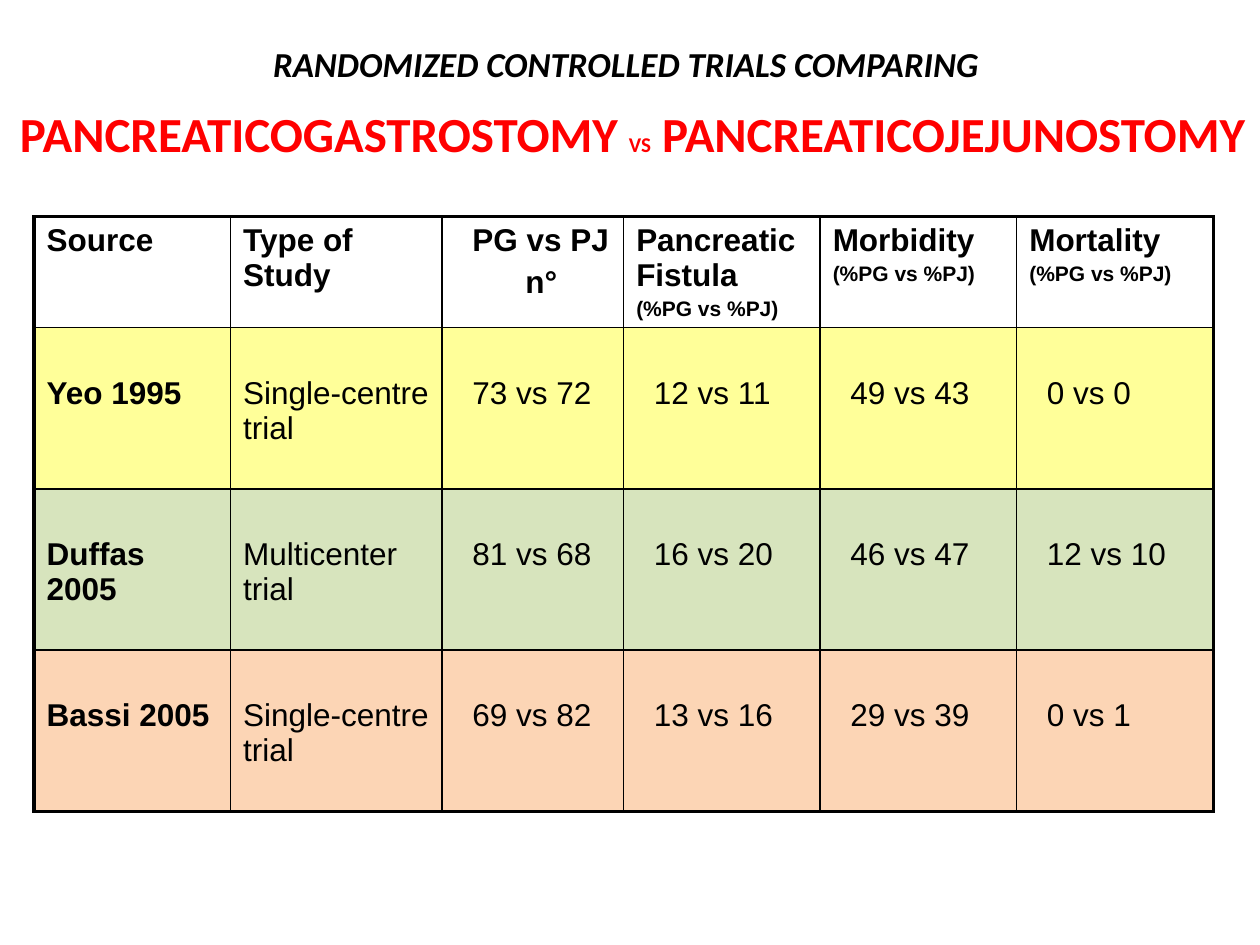
from lxml import etree
from pptx import Presentation
from pptx.dml.color import RGBColor
from pptx.enum.text import MSO_ANCHOR, MSO_AUTO_SIZE, PP_ALIGN
from pptx.oxml.ns import qn
from pptx.util import Inches, Pt

MIDDLE, FIXED = MSO_ANCHOR.MIDDLE, MSO_AUTO_SIZE.NONE
LEFT, CENTER, JUSTIFY = PP_ALIGN.LEFT, PP_ALIGN.CENTER, PP_ALIGN.JUSTIFY

HUES = {"ink": "000000", "red": "FF0000", "yellow": "FFFF99",
        "green": "D7E4BD", "peach": "FCD5B5"}

TITLE = "RANDOMIZED CONTROLLED TRIALS COMPARING "
METHODS = [("PANCREATICOGASTROSTOMY ", 28), ("VS", 12),
           (" PANCREATICOJEJUNOSTOMY", 28)]
UNIT = ("(%PG vs %PJ)", 12)
HEADS = [
    [("Source", 18)],
    [("Type of Study", 18)],
    [("PG vs PJ", 18), ("n°", 18)],
    [("Pancreatic Fistula", 18), UNIT],
    [("Morbidity", 18), UNIT],
    [("Mortality", 18), UNIT],
]
TRIALS = [
    ("yellow", ["Yeo 1995", "Single-centre trial",
                "73 vs 72", "12 vs 11", "49 vs 43", "0 vs 0"]),
    ("green", ["Duffas 2005", "Multicenter trial",
               "81 vs 68", "16 vs 20", "46 vs 47", "12 vs 10"]),
    ("peach", ["Bassi 2005", "Single-centre trial",
               "69 vs 82", "13 vs 16", "29 vs 39", "0 vs 1"]),
]
COLS = [1.56, 1.68, 1.44, 1.56, 1.56, 1.56]
HEAD_ROW, TRIAL_ROW = 0.79, 1.28
PAD, INDENT, DROP = 0.1, 0.24, 0.38
THIN, THICK = 1, 2.25


def put(frame, paras, font="Arial", hue="ink", bold=False, italic=False,
        align=LEFT, gap=0):
    """Write paragraphs, each a list of (text, size); gap is a share of size."""
    frame.word_wrap = True
    for i, runs in enumerate(paras):
        para = frame.paragraphs[0] if i == 0 else frame.add_paragraph()
        para.alignment = align
        para.space_before = Pt(gap * runs[0][1])
        for text, size in runs:
            run = para.add_run()
            run.text = text
            face = run.font
            face.name, face.size = font, Pt(size)
            face.bold, face.italic = bold, italic
            face.color.rgb = RGBColor.from_string(HUES[hue])


def place(shape, left, top, width, height):
    shape.left, shape.top = Inches(left), Inches(top)
    shape.width, shape.height = Inches(width), Inches(height)
    shape.text_frame.auto_size = FIXED
    shape.text_frame.vertical_anchor = MIDDLE


def edge(cell, sides):
    """Draw cell borders from (side, points) pairs in schema order."""
    props = cell._tc.get_or_add_tcPr()
    for i, (side, width) in enumerate(sides):
        line = etree.Element(qn("a:ln" + side), w=str(Pt(width)))
        fill = etree.SubElement(line, qn("a:solidFill"))
        etree.SubElement(fill, qn("a:srgbClr"), val=HUES["ink"])
        props.insert(i, line)


def main():
    deck = Presentation()
    deck.slide_width, deck.slide_height = Inches(10), Inches(7.5)
    slide = deck.slides.add_slide(deck.slide_layouts[5])

    title = slide.shapes.title
    place(title, 0, 0.15, 10, 0.71)
    put(title.text_frame, [[(TITLE, 20)]], font="Calibri", bold=True,
        italic=True, align=CENTER)

    banner = slide.shapes.add_textbox(0, 0, 0, 0)
    place(banner, 0.04, 0.7, 9.96, 0.71)
    put(banner.text_frame, [METHODS], font="Calibri", hue="red", bold=True,
        align=CENTER)

    rows = [HEAD_ROW] + [TRIAL_ROW] * len(TRIALS)
    table = slide.shapes.add_table(
        len(rows), len(COLS), Inches(0.27), Inches(1.72),
        Inches(sum(COLS)), Inches(sum(rows))).table
    table.first_row = table.horz_banding = False
    for col, width in zip(table.columns, COLS):
        col.width = Inches(width)
    for row, height in zip(table.rows, rows):
        row.height = Inches(height)

    grid = [(None, HEADS)] + [
        (hue, [[(text, 18)] for text in texts]) for hue, texts in TRIALS]
    for r, (hue, line) in enumerate(grid):
        for c, paras in enumerate(line):
            cell = table.cell(r, c)
            data = r > 0 and c > 1
            cell.margin_left = Inches(INDENT if data or c == 2 else PAD)
            if hue:
                cell.margin_top = Inches(DROP)
                cell.fill.solid()
                cell.fill.fore_color.rgb = RGBColor.from_string(HUES[hue])
            else:
                cell.fill.background()
            put(cell.text_frame, [[para] for para in paras],
                bold=r == 0 or c == 0, align=JUSTIFY if data else LEFT,
                gap=0.2)
            outer = {"L": c == 0, "R": c == len(COLS) - 1,
                     "T": r == 0, "B": r == len(rows) - 1}
            edge(cell, [(s, THICK if out else THIN)
                        for s, out in outer.items()])

    count = table.cell(0, 2).text_frame.paragraphs[1]
    count._p.get_or_add_pPr().set("marL", str(Inches(0.42)))
    deck.save("out.pptx")


if __name__ == "__main__":
    main()
